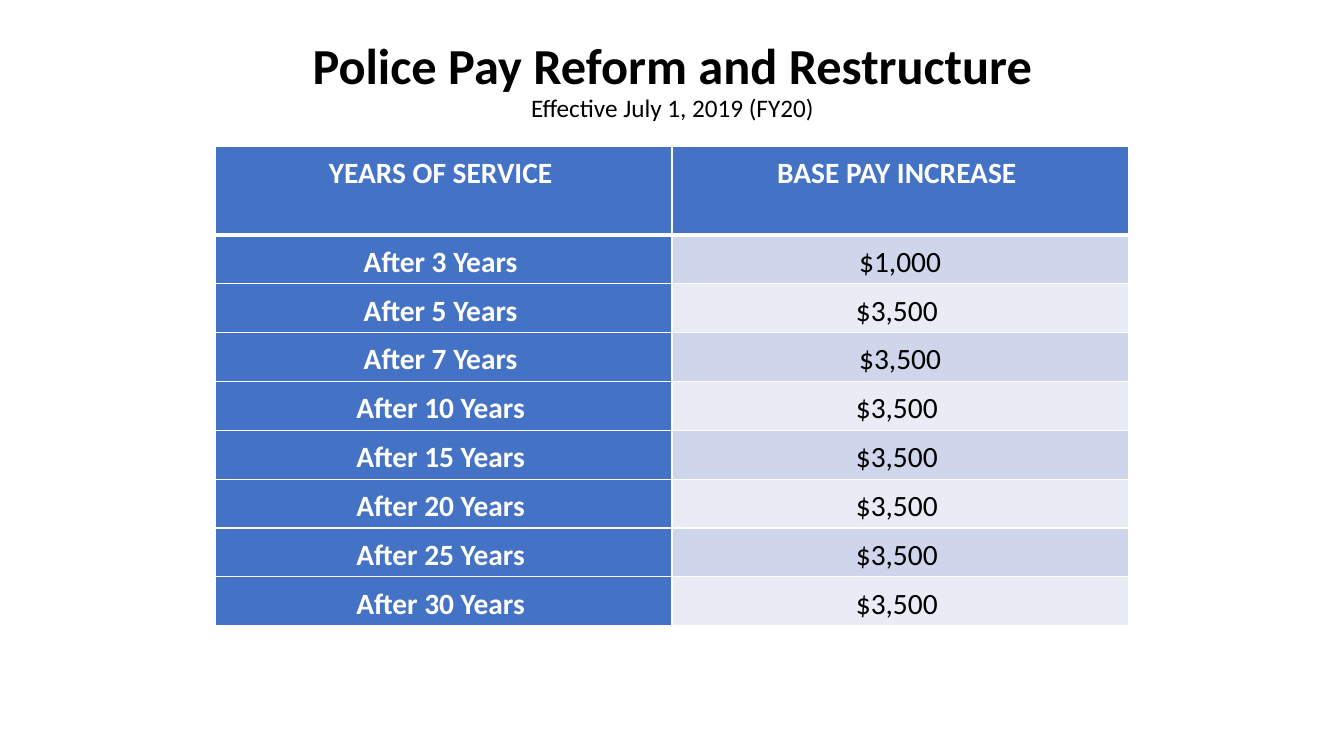
import pptx
import pptx.dml.color
import pptx.enum.text
import pptx.oxml
import pptx.oxml.ns
import pptx.util
from pptx.util import Inches

FONT = "Calibri"
BLACK, WHITE, BLUE = "000000", "FFFFFF", "4472C4"
BANDS = ("CFD5EA", "E9EBF5")

HEADINGS = ("YEARS OF SERVICE ", "BASE PAY INCREASE ")
PAY_STEPS = (
    ("After 3 Years ", "$1,000"),
    ("After 5 Years ", "$3,500 "),
    ("After 7 Years ", "$3,500"),
    ("After 10 Years ", "$3,500 "),
    ("After 15 Years ", "$3,500 "),
    ("After 20 Years ", "$3,500 "),
    ("After 25 Years ", "$3,500 "),
    ("After 30 Years ", "$3,500 "),
)


def color(value):
    return pptx.dml.color.RGBColor.from_string(value)


def write(paragraph, text, size=21, fill=BLACK, bold=False, spacing=1.15):
    paragraph.alignment = pptx.enum.text.PP_ALIGN.CENTER
    paragraph.line_spacing = spacing
    run = paragraph.add_run()
    run.text = text
    run.font.name = FONT
    run.font.size = pptx.util.Pt(size)
    run.font.bold = bold
    run.font.color.rgb = color(fill)


class SlideBuilder:
    def __init__(self, presentation):
        self.slide = presentation.slides.add_slide(presentation.slide_layouts[6])

    def heading(self, title, subtitle):
        box = self.slide.shapes.add_textbox(
            Inches(0.92), Inches(0), Inches(11.5), Inches(1.45))
        frame = box.text_frame
        frame.word_wrap = True
        frame.margin_top = Inches(0.41)
        write(frame.paragraphs[0], title, size=36, bold=True, spacing=0.9)
        write(frame.add_paragraph(), subtitle, size=18, spacing=0.9)

    def borders(self, cell, **widths):
        properties = cell._tc.get_or_add_tcPr()
        namespace = pptx.oxml.ns.nsdecls("a")
        # Border lines come before the cell fill
        for index, side in enumerate("LRTB"):
            width = pptx.util.Pt(widths.get(side, 1))
            properties.insert(index, pptx.oxml.parse_xml(
                f'<a:ln{side} {namespace} w="{width}"><a:solidFill>'
                f'<a:srgbClr val="{WHITE}"/></a:solidFill></a:ln{side}>'))

    def cell(self, cell, text, background, header=False, **font):
        cell.margin_left = cell.margin_right = Inches(0.09)
        cell.margin_top = cell.margin_bottom = Inches(0.04)
        cell.fill.solid()
        cell.fill.fore_color.rgb = color(background)
        write(cell.text_frame.paragraphs[0], text, **font)
        self.borders(cell, B=3 if header else 1)

    def pay_table(self, headings, steps):
        header_height, table_height = 0.88, 4.76
        table = self.slide.shapes.add_table(
            len(steps) + 1, len(headings), Inches(2.14), Inches(1.45),
            Inches(9.05), Inches(table_height)).table
        table.rows[0].height = Inches(header_height)
        strong = {"fill": WHITE, "bold": True}
        for column, heading in enumerate(headings):
            self.cell(table.cell(0, column), heading, BLUE, header=True, **strong)
        for row, (years, increase) in enumerate(steps, start=1):
            table.rows[row].height = Inches((table_height - header_height) / len(steps))
            self.cell(table.cell(row, 0), years, BLUE, **strong)
            self.cell(table.cell(row, 1), increase, BANDS[(row - 1) % 2])


def main():
    presentation = pptx.Presentation()
    presentation.slide_width = Inches(13.33)
    presentation.slide_height = Inches(7.5)
    builder = SlideBuilder(presentation)

    # Title and effective date
    builder.heading("Police Pay Reform and Restructure", "Effective July 1, 2019 (FY20)")

    # Pay increase by years of service
    builder.pay_table(HEADINGS, PAY_STEPS)

    presentation.save("out.pptx")


if __name__ == "__main__":
    main()
